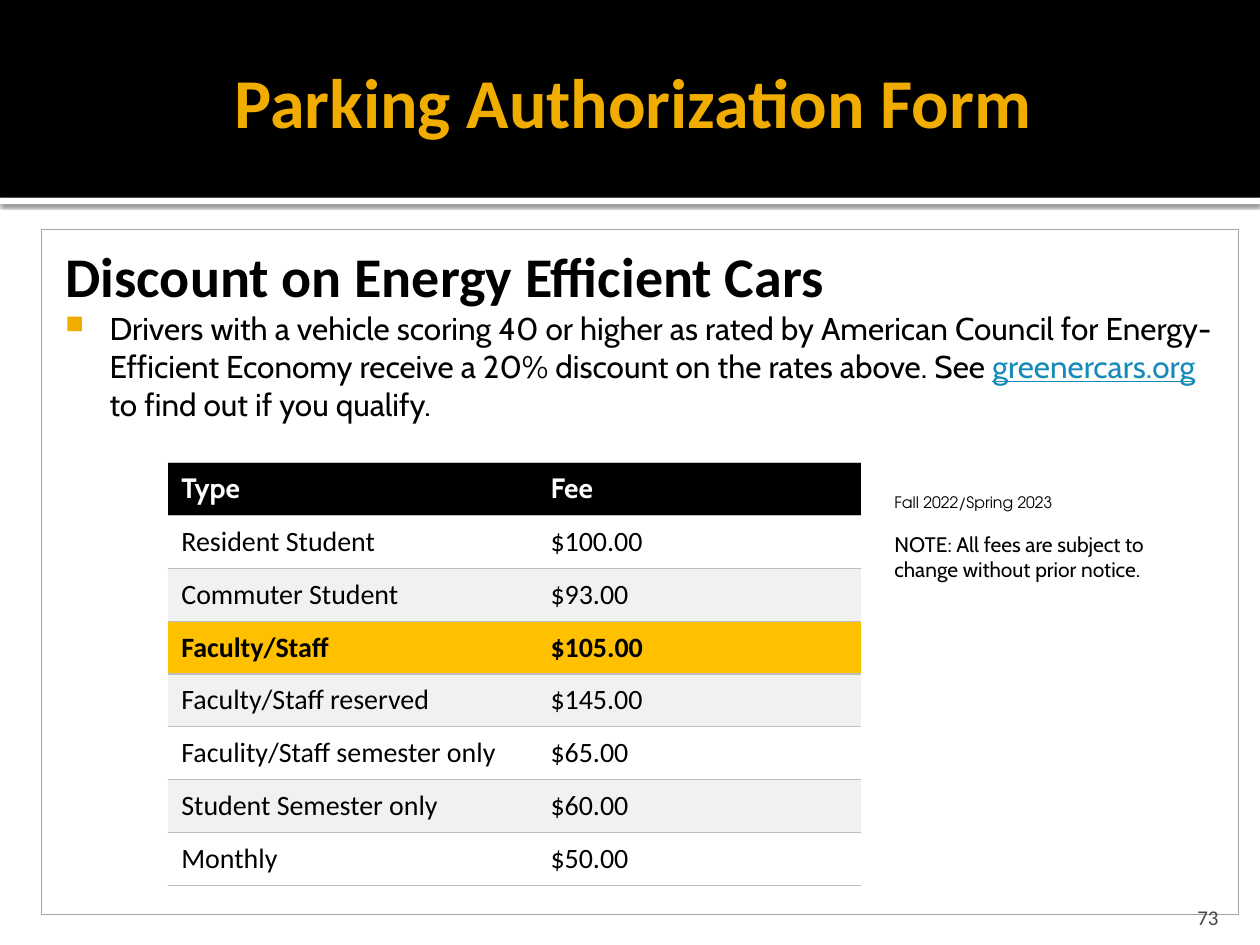
from dataclasses import dataclass

from lxml import etree
from pptx import Presentation
from pptx import util as u
from pptx.dml.color import RGBColor
from pptx.enum import shapes, text
from pptx.oxml import parse_xml
from pptx.oxml.ns import nsdecls, qn

COLUMNS, ROWS = 100, 75
NO_TABLE_STYLE = "{2D5ABB26-0587-4C30-8999-92F81FD0307C}"


@dataclass(frozen=True)
class Theme:
    black: str = "000000"
    white: str = "FFFFFF"
    gold: str = "F0AD00"
    highlight: str = "FFC000"
    band: str = "F1F1F1"
    rule: str = "BDBFBD"
    frame: str = "A6A6A6"
    link: str = "168BBA"
    muted: str = "454545"
    heading_font: str = "Calibri"
    body_font: str = "Cabin"
    term_font: str = "TeX Gyre Adventor"
    title: int = 40
    heading: int = 32
    body: int = 18
    cell: int = 16
    small: int = 12
    tiny: int = 9


class SlideBuilder:
    def __init__(self, deck, theme):
        self.theme = theme
        self.page = deck.slides.add_slide(deck.slide_layouts[6])
        self.column = deck.slide_width / COLUMNS
        self.row = deck.slide_height / ROWS

    def place(self, left, top, width, height):
        """Turn grid columns and rows into slide lengths."""
        return (round(left * self.column), round(top * self.row),
                round(width * self.column), round(height * self.row))

    def rect(self, area, fill=None, line=None):
        box = self.page.shapes.add_shape(shapes.MSO_SHAPE.RECTANGLE, *self.place(*area))
        box.shadow.inherit = False
        if fill:
            box.fill.solid()
            box.fill.fore_color.rgb = RGBColor.from_string(fill)
        else:
            box.fill.background()
        if line:
            box.line.color.rgb = RGBColor.from_string(line)
            box.line.width = u.Pt(0.75)
        else:
            box.line.fill.background()
        return box

    def drop_shadow(self, box):
        effects = box._element.spPr.find(qn("a:effectLst"))
        effects.append(parse_xml(
            f'<a:outerShdw {nsdecls("a")} blurRad="{u.Pt(2.5)}" dist="{u.Pt(0.8)}" '
            f'dir="5400000" algn="tl" rotWithShape="0"><a:srgbClr val="{self.theme.black}">'
            '<a:alpha val="60000"/></a:srgbClr></a:outerShdw>'))

    def text_box(self, area):
        return self.page.shapes.add_textbox(*self.place(*area))

    def frame(self, box, insets, anchor):
        """Set up the text frame; insets are inches: left, top, right, bottom."""
        frame = box.text_frame
        frame.word_wrap = True
        frame.vertical_anchor = anchor
        (frame.margin_left, frame.margin_top,
         frame.margin_right, frame.margin_bottom) = map(u.Inches, insets)
        return frame

    def span(self, para, words, size, font, color=None, bold=False, underline=False):
        span = para.add_run()
        span.text = words
        span.font.size = u.Pt(size)
        span.font.name = font
        span.font.bold = bold
        span.font.underline = underline
        span.font.color.rgb = RGBColor.from_string(color or self.theme.black)

    def indent(self, para, left, first=0, bullet=None):
        props = para._p.get_or_add_pPr()
        props.set("marL", str(u.Inches(left)))
        props.set("indent", str(u.Inches(first)))
        if bullet:
            color = etree.SubElement(props, qn("a:buClr"))
            etree.SubElement(color, qn("a:srgbClr")).set("val", self.theme.gold)
            etree.SubElement(props, qn("a:buSzPct")).set("val", "80000")
            etree.SubElement(props, qn("a:buChar")).set("char", bullet)

    def fee_table(self, left, top, widths, row_height, rows, highlighted):
        theme = self.theme
        area = self.place(left, top, sum(widths), row_height * len(rows))
        table = self.page.shapes.add_table(len(rows), len(widths), *area).table
        table._tbl.tblPr.find(qn("a:tableStyleId")).text = NO_TABLE_STYLE
        for column, width in zip(table.columns, widths):
            column.width = round(width * self.column)
        for index, values in enumerate(rows):
            header, strong = index == 0, index == highlighted
            fill = (theme.black if header else theme.highlight if strong
                    else theme.white if index % 2 else theme.band)
            for cell, words in zip(table.rows[index].cells, values):
                cell.fill.solid()
                cell.fill.fore_color.rgb = RGBColor.from_string(fill)
                cell.vertical_anchor = text.MSO_ANCHOR.MIDDLE
                cell.margin_left = cell.margin_right = u.Inches(0.11)
                cell.margin_top = cell.margin_bottom = u.Inches(0.07)
                self.rule_cell(cell)
                self.span(cell.text_frame.paragraphs[0], words, theme.cell,
                          theme.body_font if header else theme.heading_font,
                          theme.white if header else theme.black, header or strong)

    def rule_cell(self, cell):
        """Draw a thin line above and below the cell."""
        for position, side in enumerate(("lnT", "lnB")):
            cell._tc.get_or_add_tcPr().insert(position, parse_xml(
                f'<a:{side} {nsdecls("a")} w="{u.Pt(0.75)}"><a:solidFill>'
                f'<a:srgbClr val="{self.theme.rule}"/></a:solidFill></a:{side}>'))


def main():
    deck = Presentation()
    deck.slide_width, deck.slide_height = u.Inches(10), u.Inches(7.5)
    theme = Theme()
    slide = SlideBuilder(deck, theme)
    anchor, align = text.MSO_ANCHOR, text.PP_ALIGN

    band_height = 15.7
    slide.drop_shadow(slide.rect((0, band_height, COLUMNS, 0.5), theme.white))
    slide.rect((0, 0, COLUMNS, band_height), theme.black)

    title = slide.frame(slide.text_box((5, 1.7, 90, 12.5)),
                        (0.1, 0.05, 0.05, 0.05), anchor.MIDDLE).paragraphs[0]
    title.alignment = align.CENTER
    slide.span(title, "Parking Authorization Form", theme.title,
               theme.heading_font, theme.gold, bold=True)

    content = slide.frame(slide.rect((3.3, 18.2, 95, 54.4), line=theme.frame),
                          (0.06, 0.1, 0.1, 0.05), anchor.TOP)
    heading, discount = content.paragraphs[0], content.add_paragraph()
    heading.alignment = discount.alignment = align.LEFT
    slide.indent(heading, 0.13)
    slide.span(heading, "Discount on Energy Efficient Cars", theme.heading,
               theme.heading_font, bold=True)
    slide.indent(discount, 0.48, -0.35, "■")
    body = theme.body, theme.body_font
    slide.span(discount, "Drivers with a vehicle scoring 40 or higher as rated by American "
               "Council for Energy-Efficient Economy receive a 20% discount on the rates "
               "above. See ", *body)
    slide.span(discount, "greenercars.org", *body, theme.link, underline=True)
    slide.span(discount, " to find out if you qualify.", *body)

    fees = [
        ("Type", "Fee"),
        ("Resident Student", "$100.00"),
        ("Commuter Student", "$93.00"),
        ("Faculty/Staff", "$105.00"),
        ("Faculty/Staff reserved", "$145.00"),
        ("Faculity/Staff semester only", "$65.00"),
        ("Student Semester only", "$60.00"),
        ("Monthly", "$50.00"),
    ]
    slide.fee_table(13.3, 36.7, (29.3, 25.7), 4.2, fees, highlighted=3)

    note = slide.frame(slide.rect((70, 39.1, 25, 7.1), theme.white),
                       (0.1, 0, 0.1, 0), anchor.MIDDLE)
    term, warning = note.paragraphs[0], note.add_paragraph()
    term.alignment = warning.alignment = align.LEFT
    slide.span(term, "Fall 2022/Spring 2023", theme.tiny, theme.term_font)
    warning.space_before = u.Pt(11)
    slide.span(warning, "NOTE: All fees are subject to change without prior notice.",
               theme.small, theme.body_font)

    number = slide.frame(slide.text_box((89.7, 70.8, 8, 3)),
                         (0.1, 0.05, 0.1, 0), anchor.BOTTOM).paragraphs[0]
    number.alignment = align.RIGHT
    slide.span(number, "73", theme.small, theme.heading_font, theme.muted)

    deck.save("out.pptx")


if __name__ == "__main__":
    main()
